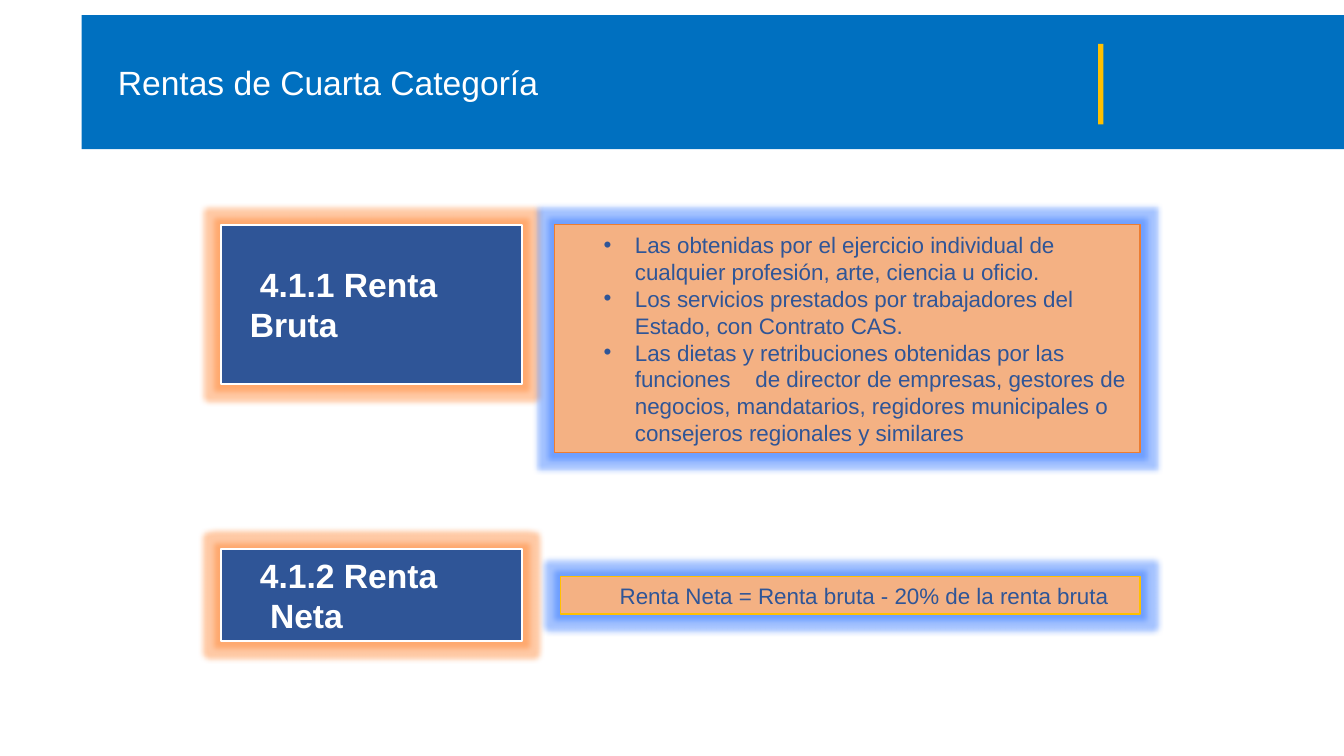
from dataclasses import dataclass

import lxml.etree
import pptx
import pptx.dml.color
import pptx.enum.shapes
import pptx.enum.text
import pptx.oxml
import pptx.oxml.ns
import pptx.shapes.autoshape
import pptx.slide
import pptx.text.text
import pptx.util

COLOURS = {
    "banner": "0070C0", "gold": "FFC000", "white": "FFFFFF",
    "navy": "2F5597", "peach": "F4B183", "orange": "ED7D31",
    "orange glow": "FF7A1E", "blue glow": "1F6BFF",
}
FONT = "Arial"
SLIDE_WIDTH = pptx.util.Inches(13.333)
SLIDE_HEIGHT = pptx.util.Inches(7.5)
GLOW_RADIUS = pptx.util.Pt(8)
WIDE_SPACE = 13.3


@dataclass
class Area:
    """Place and size in percent of the slide's width and height."""
    left: float
    top: float
    width: float
    height: float

    def lengths(self) -> tuple[int, int, int, int]:
        return (int(SLIDE_WIDTH * self.left / 100), int(SLIDE_HEIGHT * self.top / 100),
                int(SLIDE_WIDTH * self.width / 100), int(SLIDE_HEIGHT * self.height / 100))


@dataclass
class Span:
    text: str
    spacing: float = 0


@dataclass
class Style:
    size: float
    colour: str
    bold: bool = False


@dataclass
class Card:
    area: Area
    fill: str
    line: str
    line_width: float
    glow: str
    style: Style
    margin: float
    indent: float
    paragraphs: list[list[Span]]
    bullet: str = ""


LABEL = Style(24, "white", bold=True)
DETAIL = Style(16, "navy")
LABEL_LEFT, LABEL_WIDTH = 16.43, 22.43
FIRST_TOP = 29.73

CARDS = [
    Card(Area(LABEL_LEFT, FIRST_TOP, LABEL_WIDTH, 21.07), "navy", "white", 1.5,
         "orange glow", LABEL, 0.19, 0.1, [[Span("4.1.1 Renta Bruta")]]),
    Card(Area(41.25, FIRST_TOP, 43.58, 30.13), "peach", "orange", 1,
         "blue glow", DETAIL, 0.7, -0.31, [
             [Span("Las obtenidas por el ejercicio individual de cualquier profesión, "
                   "arte, ciencia u oficio.")],
             [Span("Los servicios prestados por trabajadores del Estado, con Contrato CAS.")],
             [Span("Las dietas y retribuciones obtenidas por las funciones"),
              Span(" ", WIDE_SPACE),
              Span("de director de empresas, gestores de negocios, mandatarios, "
                   "regidores municipales o consejeros regionales y similares")],
         ], bullet="•"),
    Card(Area(LABEL_LEFT, 72.67, LABEL_WIDTH, 12.13), "navy", "white", 1.5,
         "orange glow", LABEL, 0.39, -0.1, [[Span("4.1.2 Renta Neta")]]),
    Card(Area(41.7, 76.27, 43.13, 4.93), "peach", "gold", 1,
         "blue glow", DETAIL, 0.49, 0,
         [[Span("Renta Neta = Renta bruta - 20% de la renta bruta")]]),
]


def rgb(name: str) -> pptx.dml.color.RGBColor:
    return pptx.dml.color.RGBColor.from_string(COLOURS[name])


def add_block(page: pptx.slide.Slide, area: Area, fill: str) -> pptx.shapes.autoshape.Shape:
    block = page.shapes.add_shape(pptx.enum.shapes.MSO_SHAPE.RECTANGLE, *area.lengths())
    block.shadow.inherit = False
    block.fill.solid()
    block.fill.fore_color.rgb = rgb(fill)
    block.line.fill.background()
    return block


def add_glow(block: pptx.shapes.autoshape.Shape, colour: str) -> None:
    effects = block._element.spPr.find(pptx.oxml.ns.qn("a:effectLst"))
    effects.append(pptx.oxml.parse_xml(
        f'<a:glow {pptx.oxml.ns.nsdecls("a")} rad="{GLOW_RADIUS}">'
        f'<a:srgbClr val="{COLOURS[colour]}"><a:alpha val="40000"/></a:srgbClr></a:glow>'))


def add_spans(para: pptx.text.text._Paragraph, spans: list[Span], style: Style) -> None:
    for part in spans:
        span = para.add_run()
        span.text = part.text
        span.font.name = FONT
        span.font.size = pptx.util.Pt(style.size)
        span.font.bold = style.bold
        span.font.color.rgb = rgb(style.colour)
        if part.spacing:
            span.font._element.set("spc", str(round(part.spacing * 100)))


def set_indent(para: pptx.text.text._Paragraph, card: Card) -> None:
    settings = para._p.get_or_add_pPr()
    settings.set("marL", str(pptx.util.Inches(card.margin)))
    settings.set("indent", str(pptx.util.Inches(card.indent)))
    if card.bullet:
        font = lxml.etree.SubElement(settings, pptx.oxml.ns.qn("a:buFont"))
        font.set("typeface", FONT)
        mark = lxml.etree.SubElement(settings, pptx.oxml.ns.qn("a:buChar"))
        mark.set("char", card.bullet)


def add_card(page: pptx.slide.Slide, card: Card) -> None:
    box = add_block(page, card.area, card.fill)
    box.line.color.rgb = rgb(card.line)
    box.line.width = pptx.util.Pt(card.line_width)
    add_glow(box, card.glow)
    frame = box.text_frame
    frame.word_wrap = True
    frame.vertical_anchor = pptx.enum.text.MSO_ANCHOR.MIDDLE
    for index, spans in enumerate(card.paragraphs):
        para = frame.add_paragraph() if index else frame.paragraphs[0]
        para.alignment = pptx.enum.text.PP_ALIGN.LEFT
        set_indent(para, card)
        add_spans(para, spans, card.style)


def add_header(page: pptx.slide.Slide) -> None:
    add_block(page, Area(6.08, 2, 93.92, 17.73), "banner")
    add_block(page, Area(81.71, 5.8, 0.38, 10.67), "gold")
    title = page.shapes.add_textbox(*Area(8.03, 2.8, 81, 16.67).lengths())
    title.text_frame.word_wrap = True
    title.text_frame.vertical_anchor = pptx.enum.text.MSO_ANCHOR.MIDDLE
    para = title.text_frame.paragraphs[0]
    para.line_spacing = 0.9
    add_spans(para, [Span("Rentas de Cuarta Categoría")], Style(24, "white"))


def main() -> None:
    deck = pptx.Presentation()
    deck.slide_width, deck.slide_height = SLIDE_WIDTH, SLIDE_HEIGHT
    page = deck.slides.add_slide(deck.slide_layouts[6])
    add_header(page)
    for card in CARDS:
        add_card(page, card)
    deck.save("out.pptx")


if __name__ == "__main__":
    main()
